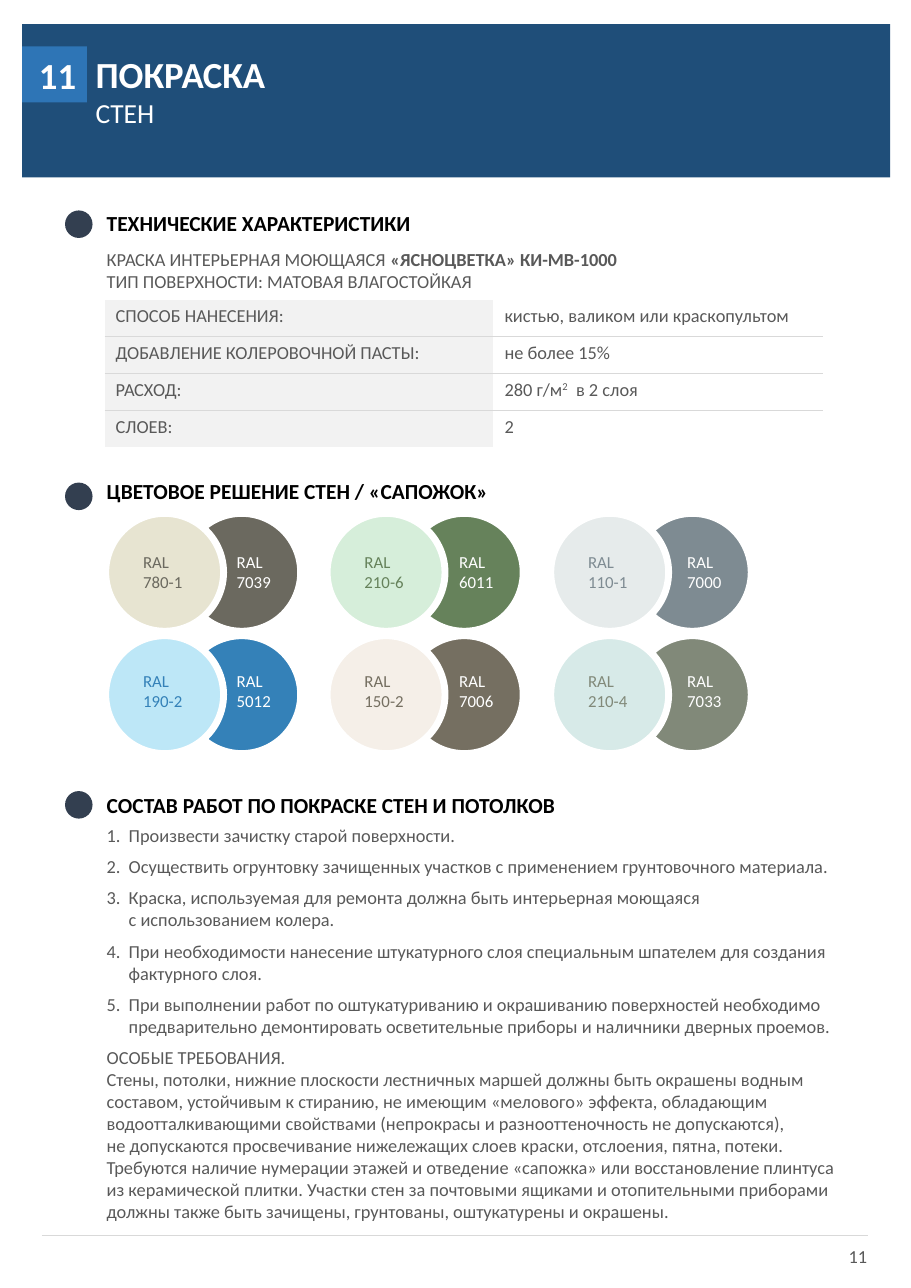
import lxml.etree
import pptx
import pptx.dml.color
import pptx.enum.shapes
import pptx.enum.text
import pptx.oxml.ns
import pptx.util

Inches = pptx.util.Inches
Pt = pptx.util.Pt
Kind = pptx.enum.shapes.MSO_SHAPE
Align = pptx.enum.text.PP_ALIGN
qn = pptx.oxml.ns.qn

COLORS = {
    "navy": "1F4E79", "blue": "2E75B6", "slate": "333F50", "white": "FFFFFF",
    "black": "000000", "gray": "595959", "pale": "F2F2F2", "rule": "D9D9D9",
    "780-1": "E7E4D1", "7039": "6B695F", "210-6": "D6EEDA", "6011": "66825B",
    "110-1": "E6EBEB", "7000": "7E8B92", "190-2": "BDE7F7", "5012": "3481B8",
    "150-2": "F5EFE8", "7006": "756F61", "210-4": "D7EAE8", "7033": "818979",
}
PAIRS = [
    [("780-1", "7039"), ("210-6", "6011"), ("110-1", "7000")],
    [("190-2", "5012"), ("150-2", "7006"), ("210-4", "7033")],
]
TRAITS = [
    ("СПОСОБ НАНЕСЕНИЯ:", "кистью, валиком или краскопультом"),
    ("ДОБАВЛЕНИЕ КОЛЕРОВОЧНОЙ ПАСТЫ:", "не более 15%"),
    ("РАСХОД:", [("280 г/м", {}), ("2", {"raised": True}), ("  в 2 слоя", {})]),
    ("СЛОЕВ:", "2"),
]
STEPS = [
    "Произвести зачистку старой поверхности.",
    "Осуществить огрунтовку зачищенных участков с применением грунтовочного материала.",
    "Краска, используемая для ремонта должна быть интерьерная моющаяся \nс использованием колера.",
    "При необходимости нанесение штукатурного слоя специальным шпателем для создания фактурного слоя.",
    "При выполнении работ по оштукатуриванию и окрашиванию поверхностей необходимо "
    "предварительно демонтировать осветительные приборы и наличники дверных проемов.",
]
DEMANDS = [
    "ОСОБЫЕ ТРЕБОВАНИЯ.",
    "Стены, потолки, нижние плоскости лестничных маршей должны быть окрашены водным "
    "составом, устойчивым к стиранию, не имеющим «мелового» эффекта, обладающим "
    "водоотталкивающими свойствами (непрокрасы и разнооттеночность не допускаются), \n"
    "не допускаются просвечивание нижележащих слоев краски, отслоения, пятна, потеки. "
    "Требуются наличие нумерации этажей и отведение «сапожка» или восстановление плинтуса "
    "из керамической плитки. Участки стен за почтовыми ящиками и отопительными приборами "
    "должны также быть зачищены, грунтованы, оштукатурены и окрашены.",
]


def rgb(name):
    """Return the named colour."""
    return pptx.dml.color.RGBColor.from_string(COLORS[name])


def write(frame, paras, size=12, color="gray", bold=False, align=None, after=0):
    """Fill a text frame with paragraphs of plain text or of (text, format) runs."""
    for i, para in enumerate(paras):
        p = frame.paragraphs[0] if i == 0 else frame.add_paragraph()
        p.alignment = align
        p.space_after = Pt(after)
        for text, extra in [(para, {})] if isinstance(para, str) else para:
            for j, part in enumerate(text.split("\n")):
                if j:
                    p.add_line_break()
                run = p.add_run()
                run.text = part
                run.font.name = "Calibri"
                run.font.size = Pt(extra.get("size", size))
                run.font.bold = extra.get("bold", bold)
                run.font.color.rgb = rgb(color)
                if extra.get("raised"):
                    run.font._element.set("baseline", "30000")
    return frame.paragraphs


def label(slide, x, y, w, h, paras, wrap=True, **style):
    """Add a text box."""
    frame = slide.shapes.add_textbox(Inches(x), Inches(y), Inches(w), Inches(h)).text_frame
    frame.word_wrap = wrap
    frame.auto_size = pptx.enum.text.MSO_AUTO_SIZE.SHAPE_TO_FIT_TEXT
    return write(frame, paras, **style)


def block(slide, kind, x, y, w, h, fill, edge=0):
    """Add a filled shape, with a white edge if one is asked for."""
    shape = slide.shapes.add_shape(kind, Inches(x), Inches(y), Inches(w), Inches(h))
    shape.shadow.inherit = False
    shape.fill.solid()
    shape.fill.fore_color.rgb = rgb(fill)
    if edge:
        shape.line.color.rgb = rgb("white")
        shape.line.width = Pt(edge)
    else:
        shape.line.fill.background()
    return shape


def banner(slide, x, y, w, h):
    """Draw the top band with its number and title."""
    block(slide, Kind.RECTANGLE, x, y, w, h, "navy")
    title = [[("ПОКРАСКА", {"bold": True})], [("СТЕН", {"size": 18})]]
    lines = label(slide, x + 0.57, y + 0.2, 5.5, 0.81, title, size=24, color="white")
    lines[0].line_spacing = Pt(29)
    frame = block(slide, Kind.RECTANGLE, x, y + 0.2, 0.59, 0.51, "blue").text_frame
    frame.margin_left = 0
    lines = write(frame, ["11"], size=24, color="white", bold=True, align=Align.RIGHT)
    lines[0].line_spacing = Pt(29)


def heading(slide, x, y, w, text, drop=0.05):
    """Draw a section heading with its dot, which sits a little lower."""
    block(slide, Kind.OVAL, x, y + drop, 0.25, 0.25, "slate")
    label(slide, x + 0.28, y, w, 0.34, [text], size=14, color="black", bold=True)


def border(cell, side):
    """Draw one thin side of a table cell."""
    line = lxml.etree.SubElement(cell._tc.get_or_add_tcPr(), qn("a:" + side), w="6350")
    fill = lxml.etree.SubElement(line, qn("a:solidFill"))
    lxml.etree.SubElement(fill, qn("a:srgbClr"), val=COLORS["rule"])


def traits(slide, x, y, w, h):
    """Draw the paint description and the table of its traits."""
    paint = [("КРАСКА ИНТЕРЬЕРНАЯ МОЮЩАЯСЯ ", {}), ("«ЯСНОЦВЕТКА» КИ-МВ-1000", {"bold": True})]
    label(slide, x, y, w, 0.5, [paint, "ТИП ПОВЕРХНОСТИ: МАТОВАЯ ВЛАГОСТОЙКАЯ"])
    last = len(TRAITS) - 1
    table = slide.shapes.add_table(
        len(TRAITS), 2, Inches(x + 0.08), Inches(y + 0.52), Inches(w), Inches(h - 0.52)).table
    table.first_row = table.horz_banding = False
    table._tbl.tblPr[0].text = "{2D5ABB26-0587-4C30-8999-92F81FD0307C}"
    table.columns[0].width = Inches(3.53)
    table.columns[1].width = Inches(w - 3.53)
    for r, row in enumerate(TRAITS):
        for c, text in enumerate(row):
            cell = table.cell(r, c)
            write(cell.text_frame, [text])
            if r > 0:
                border(cell, "lnT")
            if r < last:
                border(cell, "lnB")
            if c == 0:
                cell.fill.solid()
                cell.fill.fore_color.rgb = rgb("pale")
            else:
                cell.fill.background()


def swatch(slide, x, y, shift, drop, light, dark):
    """Draw a light disc over a dark one, each with its code."""
    for code, left in ((dark, x + shift), (light, x)):
        block(slide, Kind.OVAL, left, y, 1.07, 1.07, code, edge=4.5)
    for code, left, color in ((light, x + 0.24, dark), (dark, x + shift + 0.39, "white")):
        label(slide, left, y + drop, 0.58, 0.47, ["RAL", code], wrap=False, size=11, color=color)


def swatches(slide, x, y):
    """Draw the grid of colour pairs."""
    for r, (row, drop) in enumerate(zip(PAIRS, (0.3, 0.27))):
        for pair, left, shift in zip(row, (0, 2.01, 4.04), (0.7, 0.71, 0.75)):
            swatch(slide, x + left, y + r * 1.11, shift, drop, *pair)


def works(slide, x, y, w, h):
    """Write the numbered steps and the special demands."""
    lines = label(slide, x, y, w, h, STEPS + DEMANDS, after=6)
    for p in lines[:len(STEPS)]:
        props = p._p.get_or_add_pPr()
        props.set("marL", str(Inches(0.2)))
        props.set("indent", str(-Inches(0.2)))
        lxml.etree.SubElement(props, qn("a:buFont"), typeface="+mj-lt")
        lxml.etree.SubElement(props, qn("a:buAutoNum"), type="arabicPeriod")
    lines[len(STEPS)].space_after = Pt(0)


def footer(slide, x, y, w):
    """Draw the bottom rule and the page number."""
    rule = slide.shapes.add_connector(
        pptx.enum.shapes.MSO_CONNECTOR.STRAIGHT, Inches(x), Inches(y), Inches(x + w), Inches(y))
    rule.line.color.rgb = rgb("rule")
    rule.line.width = Pt(0.5)
    lxml.etree.SubElement(rule._element.spPr, qn("a:effectLst"))
    label(slide, x + w - 0.4, y + 0.04, 0.49, 0.31, ["11"], align=Align.RIGHT, after=6)


def main():
    """Build and save the page."""
    deck = pptx.Presentation()
    deck.slide_width = Inches(8.27)
    deck.slide_height = Inches(11.69)
    slide = deck.slides.add_slide(deck.slide_layouts[6])
    banner(slide, 0.2, 0.22, 7.88, 1.39)
    heading(slide, 0.59, 1.86, 3.95, "ТЕХНИЧЕСКИЕ ХАРАКТЕРИСТИКИ")
    traits(slide, 0.87, 2.2, 6.52, 1.86)
    heading(slide, 0.59, 4.29, 3.95, "ЦВЕТОВОЕ РЕШЕНИЕ СТЕН / «САПОЖОК»", drop=0.09)
    swatches(slide, 0.96, 4.66)
    heading(slide, 0.59, 7.14, 5.26, "СОСТАВ РАБОТ ПО ПОКРАСКЕ СТЕН И ПОТОЛКОВ", drop=0.04)
    works(slide, 0.87, 7.43, 6.82, 3.75)
    footer(slide, 0.38, 11.21, 7.5)
    deck.save("out.pptx")


if __name__ == "__main__":
    main()
